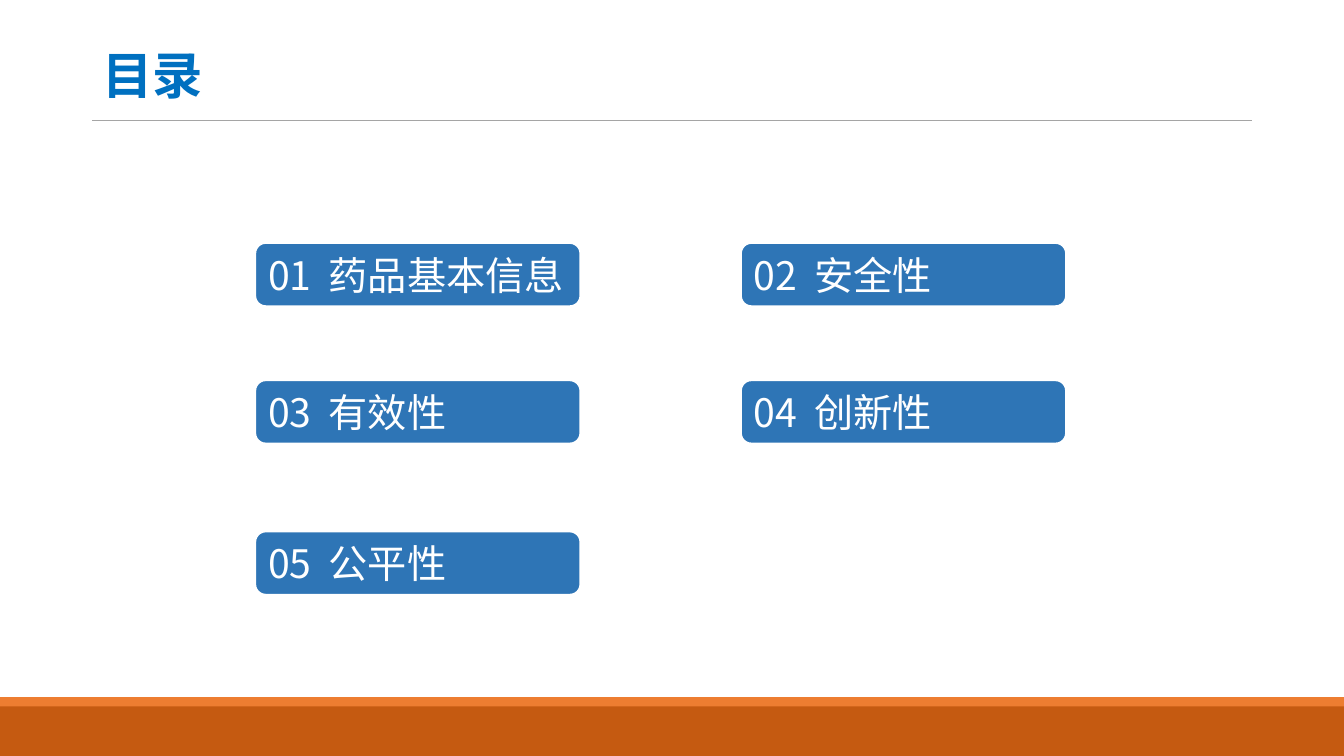
from lxml.etree import SubElement
from pptx import Presentation
from pptx.dml.color import RGBColor
from pptx.enum.shapes import MSO_CONNECTOR, MSO_SHAPE
from pptx.enum.text import MSO_ANCHOR, PP_ALIGN
from pptx.oxml.ns import qn
from pptx.util import Cm, Pt


def color(hex_value):
    return RGBColor.from_string(hex_value)


class AgendaSlide:
    """Holds the style and the current slide, and draws its elements."""

    font = "Noto Sans CJK SC"
    title_color = "0070C0"
    item_color = "2E75B6"
    white = "FFFFFF"
    rule_color = "A5A5A5"

    def __init__(self, deck):
        self.slide = deck.slides.add_slide(deck.slide_layouts[6])

    def style(self, paragraph, size, hex_value, bold=False):
        paragraph.alignment = PP_ALIGN.LEFT
        for run in paragraph.runs:
            run.font.size = Pt(size)
            run.font.bold = bold
            run.font.name = self.font
            run.font.color.rgb = color(hex_value)
            SubElement(run.font._element, qn("a:ea"), typeface=self.font)

    def title(self, wording, left, top, width, height):
        heading = self.slide.shapes.add_textbox(
            Cm(left), Cm(top), Cm(width), Cm(height)).text_frame
        heading.word_wrap = True
        heading.vertical_anchor = MSO_ANCHOR.MIDDLE
        heading.text = wording
        heading.paragraphs[0].line_spacing = 0.9
        self.style(heading.paragraphs[0], 36, self.title_color, bold=True)

    def block(self, preset, fill, left, top, width, height):
        block = self.slide.shapes.add_shape(
            preset, Cm(left), Cm(top), Cm(width), Cm(height))
        block.shadow.inherit = False
        block.fill.solid()
        block.fill.fore_color.rgb = color(fill)
        block.line.fill.background()
        return block

    def item(self, number, topic, left, top):
        button = self.block(MSO_SHAPE.ROUNDED_RECTANGLE, self.item_color,
                            left, top, 8.2, 1.6)
        button.line.color.rgb = color(self.white)
        button.line.width = Pt(1.5)
        label = button.text_frame
        label.word_wrap = True
        label.vertical_anchor = MSO_ANCHOR.MIDDLE
        label.text = f"{number:02d}\t{topic}"
        entry = label.paragraphs[0]
        tabs = SubElement(entry._p.get_or_add_pPr(), qn("a:tabLst"))
        SubElement(tabs, qn("a:tab"), pos=str(Cm(1.53)), algn="l")
        self.style(entry, 28, self.white)

    def rule(self, left, top, width):
        rule = self.slide.shapes.add_connector(
            MSO_CONNECTOR.STRAIGHT, Cm(left), Cm(top), Cm(left + width), Cm(top))
        rule.line.color.rgb = color(self.rule_color)
        rule.line.width = Pt(0.5)
        SubElement(rule._element.spPr, qn("a:effectLst"))

    def band(self, fill, top, height):
        self.block(MSO_SHAPE.RECTANGLE, fill, 0, top, 33.87, height)


def main():
    deck = Presentation()
    deck.slide_width, deck.slide_height = Cm(33.87), Cm(19.05)
    agenda = AgendaSlide(deck)

    agenda.title("目录", 2.33, 0.13, 29.21, 3.68)
    topics = ["药品基本信息", "安全性", "有效性", "创新性", "公平性"]
    columns = [6.43, 18.67]
    rows = [6.12, 9.58, 13.39]
    for index, topic in enumerate(topics):
        row, column = divmod(index, len(columns))
        agenda.item(index + 1, topic, columns[column], rows[row])

    agenda.rule(2.33, 3.03, 29.21)
    agenda.band("C55A11", 17.79, 1.26)
    agenda.band("ED7D31", 17.57, 0.23)
    deck.save("out.pptx")


if __name__ == "__main__":
    main()
